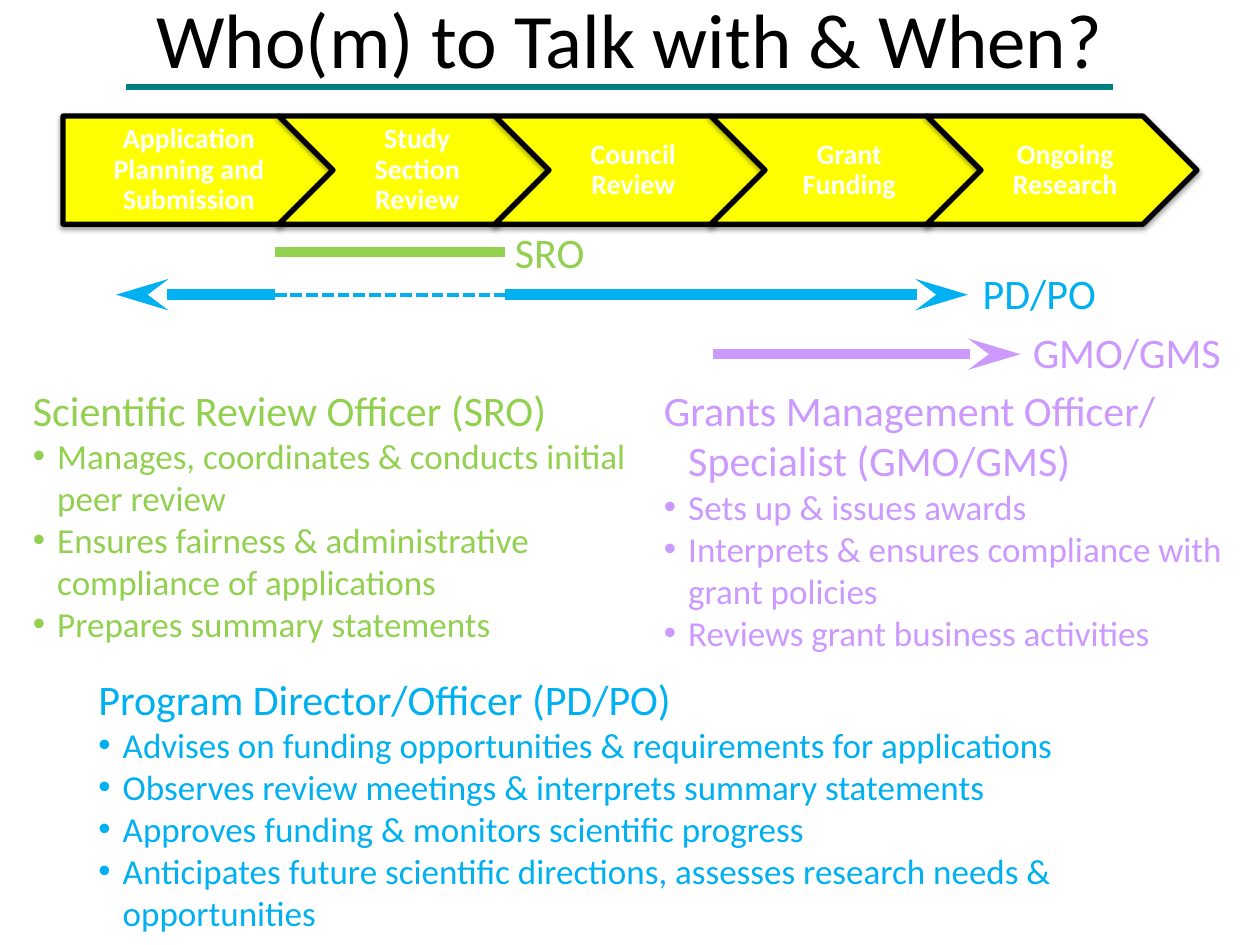
from dataclasses import dataclass

from lxml import etree
from pptx import Presentation
from pptx.dml.color import RGBColor
from pptx.enum.dml import MSO_LINE
from pptx.enum.shapes import MSO_CONNECTOR, MSO_SHAPE
from pptx.enum.text import MSO_ANCHOR, MSO_AUTO_SIZE, PP_ALIGN
from pptx.oxml.ns import qn
from pptx.util import Cm, Pt

CENTER, LEFT = PP_ALIGN.CENTER, PP_ALIGN.LEFT
TOP, MIDDLE = MSO_ANCHOR.TOP, MSO_ANCHOR.MIDDLE
FIXED = MSO_AUTO_SIZE.NONE
STRAIGHT = MSO_CONNECTOR.STRAIGHT
PENTAGON, CHEVRON = MSO_SHAPE.PENTAGON, MSO_SHAPE.CHEVRON
SYS_DASH = MSO_LINE.SQUARE_DOT
COMPARISON_LAYOUT = 4


@dataclass(frozen=True)
class Theme:
    font: str = "Calibri"
    ink: str = "000000"
    step_fill: str = "FFFF00"
    step_text: str = "FFFFFF"
    rule: str = "008080"
    sro: str = "92D050"
    program: str = "00B0F0"
    grants: str = "CC99FF"
    title_size: float = 44
    heading_size: float = 24
    item_size: float = 20
    step_size: float = 16
    step_line: float = 3
    rule_line: float = 3.5
    span_line: float = 6
    dash_line: float = 2.25


@dataclass(frozen=True)
class Box:
    left: float
    top: float
    width: float
    height: float

    def lengths(self):
        return Cm(self.left), Cm(self.top), Cm(self.width), Cm(self.height)


THEME = Theme()

STEPS = ["Application Planning and Submission", "Study Section Review",
         "Council Review", "Grant Funding", "Ongoing Research"]

ROLES = [
    (2, Box(0.41, 7.62, 12.62, 5.56), THEME.sro,
     "Scientific Review Officer (SRO)",
     ["Manages, coordinates & conducts initial peer review",
      "Ensures fairness & administrative compliance of applications",
      "Prepares summary statements"]),
    (4, Box(13.13, 7.62, 11.86, 5.74), THEME.grants,
     "Grants Management Officer/\vSpecialist (GMO/GMS)",
     ["Sets up & issues awards",
      "Interprets & ensures compliance with grant policies",
      "Reviews grant business activities"]),
    (1, Box(1.73, 13.44, 21.95, 5.51), THEME.program,
     "Program Director/Officer (PD/PO)",
     ["Advises on funding opportunities & requirements for applications",
      "Observes review meetings & interprets summary statements",
      "Approves funding & monitors scientific progress",
      "Anticipates future scientific directions, assesses research needs & opportunities"]),
]


def write(paragraph, text, *, size, color, bold=False, align=LEFT, spacing=1.0):
    paragraph.text = text
    paragraph.alignment = align
    paragraph.line_spacing = spacing
    paragraph.space_before = paragraph.space_after = Pt(0)
    for run in paragraph.runs:
        run.font.name = THEME.font
        run.font.size = Pt(size)
        run.font.bold = bold
        run.font.color.rgb = RGBColor.from_string(color)


def place(shape, box):
    shape.left, shape.top, shape.width, shape.height = box.lengths()


def hang(paragraph, bulleted):
    properties = paragraph._p.get_or_add_pPr()
    properties.set("marL", str(Cm(0.49)))
    properties.set("indent", str(-Cm(0.49)))
    if bulleted:
        etree.SubElement(properties, qn("a:buFont")).set("typeface", "Arial")
        etree.SubElement(properties, qn("a:buChar")).set("char", "•")
    else:
        etree.SubElement(properties, qn("a:buNone"))


def drop_shadow(shape):
    effects = etree.SubElement(shape._element.spPr, qn("a:effectLst"))
    shadow = etree.SubElement(effects, qn("a:outerShdw"), blurRad=str(Pt(3.1)),
                              dist=str(Pt(1.6)), dir="5400000", rotWithShape="0")
    black = etree.SubElement(shadow, qn("a:srgbClr"), val=THEME.ink)
    etree.SubElement(black, qn("a:alpha"), val="38000")


def add_line(slide, start, end, y, color, weight, dash=None, arrow=False):
    line = slide.shapes.add_connector(STRAIGHT, Cm(start), Cm(y), Cm(end), Cm(y))
    line.line.color.rgb = RGBColor.from_string(color)
    line.line.width = Pt(weight)
    if dash:
        line.line.dash_style = dash
    if arrow:
        etree.SubElement(line.line._get_or_add_ln(), qn("a:tailEnd"),
                         type="stealth", w="med", len="lg")
    etree.SubElement(line._element.spPr, qn("a:effectLst"))


def add_label(slide, box, text, color):
    frame = slide.shapes.add_textbox(*box.lengths()).text_frame
    frame.word_wrap = False
    write(frame.paragraphs[0], text, size=THEME.heading_size, color=color)


def add_title(slide, box):
    title = slide.shapes.title
    place(title, box)
    title.text_frame.auto_size = FIXED
    title.text_frame.vertical_anchor = MIDDLE
    write(title.text_frame.paragraphs[0], "Who(m) to Talk with & When?",
          size=THEME.title_size, color=THEME.ink, align=CENTER)
    add_line(slide, box.left + 1.27, box.left + 21.16, box.top + 2.59,
             THEME.rule, THEME.rule_line)


def add_process(slide, box):
    overlap = 0.2
    width = box.width / (len(STEPS) - overlap * (len(STEPS) - 1))
    for index, name in enumerate(STEPS):
        left = box.left + index * width * (1 - overlap)
        step = slide.shapes.add_shape(
            CHEVRON if index else PENTAGON,
            *Box(left, box.top, width, box.height).lengths())
        step.fill.solid()
        step.fill.fore_color.rgb = RGBColor.from_string(THEME.step_fill)
        step.line.color.rgb = RGBColor.from_string(THEME.ink)
        step.line.width = Pt(THEME.step_line)
        drop_shadow(step)
        frame = step.text_frame
        frame.word_wrap = True
        frame.vertical_anchor = MIDDLE
        frame.margin_left = Cm(0.18 if index else 0.23)
        frame.margin_right = Cm(0.05)
        frame.margin_top = frame.margin_bottom = Cm(0.13)
        write(frame.paragraphs[0], name, size=THEME.step_size,
              color=THEME.step_text, bold=True, align=CENTER, spacing=0.9)


def add_contact_spans(slide, box):
    left, top = box.left, box.top
    sro_y, program_y, grants_y = top + 0.63, top + 1.49, top + 2.69
    review_start, review_end = left + 3.2, left + 7.85
    add_line(slide, review_start, review_end, sro_y, THEME.sro, THEME.span_line)
    add_label(slide, Box(left + 7.79, top, 1.93, 1.27), "SRO", THEME.sro)

    add_line(slide, review_end, left + 17.17, program_y, THEME.program,
             THEME.span_line, arrow=True)
    add_line(slide, review_start, left, program_y, THEME.program,
             THEME.span_line, arrow=True)
    add_line(slide, review_start, review_end, program_y, THEME.program,
             THEME.dash_line, dash=SYS_DASH)
    add_label(slide, Box(left + 17.22, top + 0.81, 2.82, 1.27), "PD/PO", THEME.program)

    add_line(slide, left + 12.04, left + 18.23, grants_y, THEME.grants,
             THEME.span_line, arrow=True)
    add_label(slide, Box(left + 18.23, top + 2.0, 4.83, 1.42), "GMO/GMS", THEME.grants)


def add_role(slide, box, slot, color, heading, duties):
    role = slide.placeholders[slot]
    place(role, box)
    frame = role.text_frame
    frame.auto_size = FIXED
    frame.vertical_anchor = TOP
    write(frame.paragraphs[0], heading, size=THEME.heading_size, color=color)
    hang(frame.paragraphs[0], bulleted=False)
    for duty in duties:
        paragraph = frame.add_paragraph()
        write(paragraph, duty, size=THEME.item_size, color=color)
        hang(paragraph, bulleted=True)


def main():
    deck = Presentation()
    deck.slide_width, deck.slide_height = Cm(25.4), Cm(19.05)
    slide = deck.slides.add_slide(deck.slide_layouts[COMPARISON_LAYOUT])
    add_title(slide, Box(1.27, -0.84, 22.86, 3.18))
    add_process(slide, Box(1.27, 2.34, 22.86, 2.18))
    add_contact_spans(slide, Box(2.34, 4.45, 23.06, 3.42))
    for slot, box, color, heading, duties in ROLES:
        add_role(slide, box, slot, color, heading, duties)
    unused = slide.placeholders[3]._element
    unused.getparent().remove(unused)
    deck.save("out.pptx")


if __name__ == "__main__":
    main()
